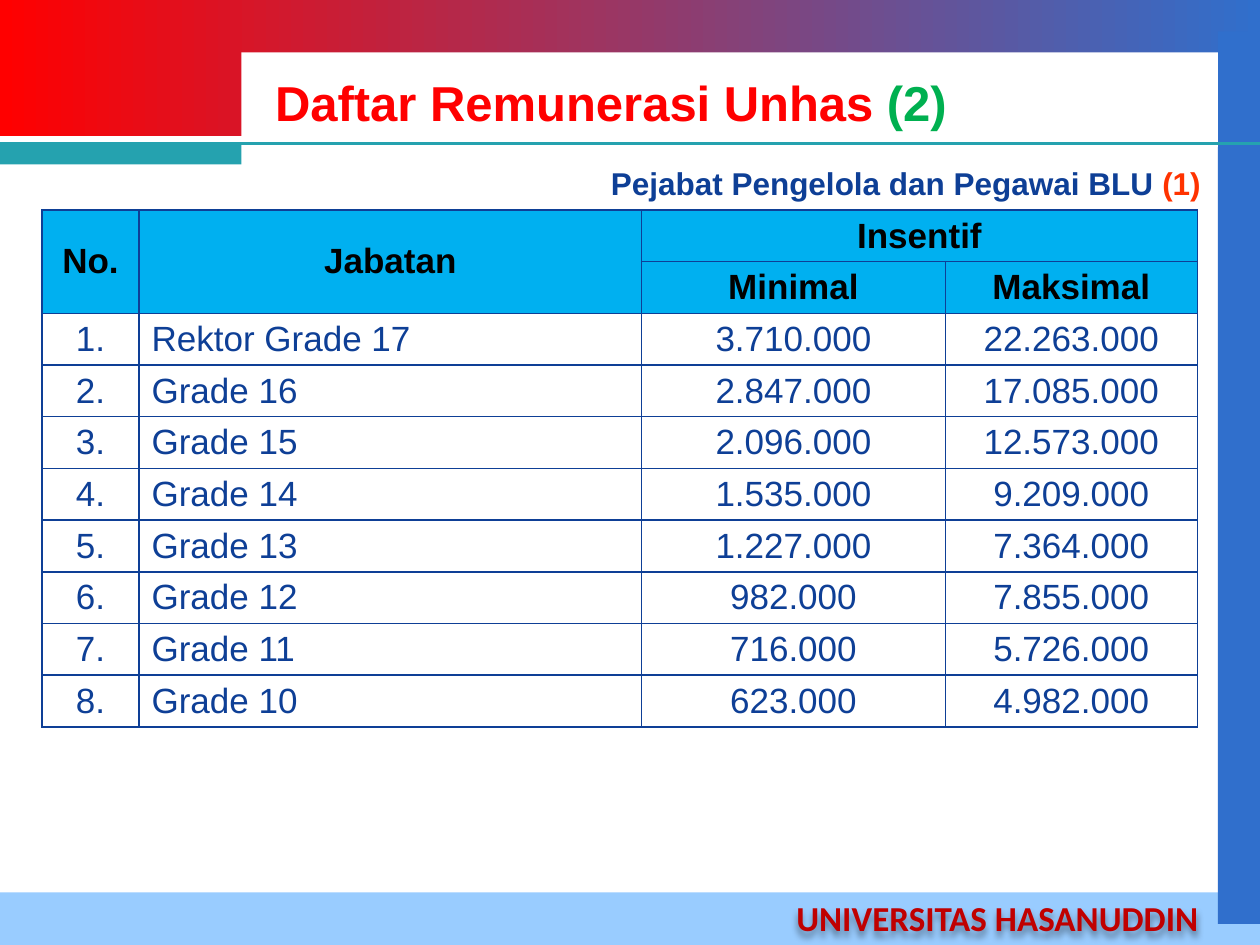
from dataclasses import dataclass
from lxml.etree import SubElement
from pptx import Presentation
from pptx.dml.color import RGBColor
from pptx.enum.shapes import MSO_CONNECTOR, MSO_SHAPE
from pptx.enum.text import MSO_ANCHOR, MSO_AUTO_SIZE, PP_ALIGN
from pptx.oxml.ns import qn
from pptx.util import Pt


@dataclass(frozen=True)
class Theme:
    """Colours, fonts and type sizes of the slide."""
    red: str = "FF0000"
    blue: str = "306FCC"
    pale: str = "99CCFF"
    teal: str = "25A2AF"
    white: str = "FFFFFF"
    black: str = "000000"
    navy: str = "0E3F96"
    sky: str = "00B0F0"
    green: str = "00B050"
    orange: str = "FF3300"
    maroon: str = "C00000"
    sans: str = "Arial"
    brand: str = "Calibri"
    title: int = 28
    cell: int = 20
    label: int = 18


THEME = Theme()
WIDTHS = (55.4, 287.3, 173.5, 144)
HEIGHT = 29.5
HEAD = (("No.", "Jabatan", "Insentif", ""), ("", "", "Minimal", "Maksimal"))
RANKS = (
    ("Rektor Grade 17", "3.710.000", "22.263.000"),
    ("Grade 16", "2.847.000", "17.085.000"),
    ("Grade 15", "2.096.000", "12.573.000"),
    ("Grade 14", "1.535.000", "9.209.000"),
    ("Grade 13", "1.227.000", "7.364.000"),
    ("Grade 12", "982.000", "7.855.000"),
    ("Grade 11", "716.000", "5.726.000"),
    ("Grade 10", "623.000", "4.982.000"),
)


def rgb(code):
    """Turn a hex code into a colour."""
    return RGBColor.from_string(code)


def add_bar(slide, box, *tints):
    """Draw a plain bar, or a left-to-right gradient for two tints."""
    bar = slide.shapes.add_shape(MSO_SHAPE.RECTANGLE, *map(Pt, box))
    bar.shadow.inherit = False
    bar.line.fill.background()
    if len(tints) == 1:
        bar.fill.solid()
        bar.fill.fore_color.rgb = rgb(tints[0])
        return
    bar.fill.gradient()
    bar.fill.gradient_angle = 0
    for stop, tint, place in zip(bar.fill.gradient_stops, tints, (0, 1)):
        stop.color.rgb = rgb(tint)
        stop.position = place


def add_rule(slide, top, tint):
    """Draw a rule across the slide."""
    rule = slide.shapes.add_connector(
        MSO_CONNECTOR.STRAIGHT, 0, Pt(top), Pt(720), Pt(top))
    rule.line.color.rgb = rgb(tint)
    rule.line.width = Pt(2.25)
    SubElement(rule._element.spPr, qn("a:effectLst"))


def write(frame, parts, size, face=THEME.sans, bold=True, align=PP_ALIGN.LEFT):
    """Write one paragraph from pairs of text and colour."""
    para = frame.paragraphs[0]
    para.alignment = align
    para.font.size = Pt(size)
    para.font.name = face
    para.font.bold = bold
    for text, tint in parts:
        run = para.add_run()
        run.text = text
        run.font.color.rgb = rgb(tint)


def add_label(slide, box, parts, size, face=THEME.sans):
    """Add a one-line text box."""
    label = slide.shapes.add_textbox(*map(Pt, box))
    label.text_frame.word_wrap = False
    label.text_frame.auto_size = MSO_AUTO_SIZE.SHAPE_TO_FIT_TEXT
    write(label.text_frame, parts, size, face)
    return label


def add_glow(shape):
    """Cast a soft shadow below the text."""
    group = SubElement(shape._element.spPr, qn("a:effectLst"))
    cast = SubElement(group, qn("a:outerShdw"), blurRad=str(Pt(4)),
                      dist=str(Pt(3)), dir="5400000", algn="t", rotWithShape="0")
    tint = SubElement(cast, qn("a:srgbClr"), val=THEME.black)
    SubElement(tint, qn("a:alpha"), val="40000")


def set_title(slide, box, parts):
    """Place the title above the bars and write it."""
    title = slide.shapes.title
    slide.shapes._spTree.append(title._element)
    title.left, title.top, title.width, title.height = map(Pt, box)
    title.text_frame.vertical_anchor = MSO_ANCHOR.MIDDLE
    write(title.text_frame, parts, THEME.title)


def set_edge(cell):
    """Line all four sides of a cell."""
    props = cell._tc.get_or_add_tcPr()
    for place, side in enumerate(("lnL", "lnR", "lnT", "lnB")):
        edge = SubElement(props, qn(f"a:{side}"), w=str(Pt(1)))
        fill = SubElement(edge, qn("a:solidFill"))
        SubElement(fill, qn("a:srgbClr"), val=THEME.navy)
        props.insert(place, edge)


def add_grid(slide, left, top):
    """Build the table of pay by grade."""
    ranks = tuple((f"{n}.", *rank) for n, rank in enumerate(RANKS, 1))
    rows = HEAD + ranks
    table = slide.shapes.add_table(
        len(rows), len(WIDTHS), Pt(left), Pt(top),
        Pt(sum(WIDTHS)), Pt(HEIGHT * len(rows))).table
    for column, width in zip(table.columns, WIDTHS):
        column.width = Pt(width)
    for y, row in enumerate(rows):
        table.rows[y].height = Pt(HEIGHT)
        head = y < len(HEAD)
        for x, text in enumerate(row):
            cell = table.cell(y, x)
            cell.fill.solid()
            cell.fill.fore_color.rgb = rgb(THEME.sky if head else THEME.white)
            cell.vertical_anchor = MSO_ANCHOR.MIDDLE if head else MSO_ANCHOR.TOP
            set_edge(cell)
            align = PP_ALIGN.LEFT if x == 1 and not head else PP_ALIGN.CENTER
            parts = [(text, THEME.black if head else THEME.navy)] if text else []
            write(cell.text_frame, parts, THEME.cell, bold=head, align=align)
    for start, end in (((0, 0), (1, 0)), ((0, 1), (1, 1)), ((0, 2), (0, 3))):
        table.cell(*start).merge(table.cell(*end))


def main():
    """Build and save the slide."""
    deck = Presentation()
    deck.slide_width, deck.slide_height = Pt(720), Pt(540)
    slide = deck.slides.add_slide(deck.slide_layouts[5])
    add_bar(slide, (0, 0, 720, 77.75), THEME.red, THEME.blue)
    add_bar(slide, (0, 510, 720, 30), THEME.pale)
    add_bar(slide, (696, 18, 24, 510), THEME.blue)
    add_bar(slide, (138, 30, 558, 54), THEME.white)
    add_rule(slide, 82, THEME.teal)
    add_bar(slide, (0, 82, 138, 12), THEME.teal)
    footer = add_label(slide, (448, 509, 246, 31.5),
                       [("UNIVERSITAS HASANUDDIN", THEME.maroon)],
                       THEME.cell, THEME.brand)
    add_glow(footer)
    set_title(slide, (150, 37.5, 540, 42),
              [("Daftar Remunerasi Unhas ", THEME.red), ("(2)", THEME.green)])
    add_grid(slide, 24, 120)
    add_label(slide, (342, 90, 355, 29),
              [("Pejabat Pengelola dan Pegawai BLU ", THEME.navy),
               ("(1)", THEME.orange)], THEME.label)
    deck.save("out.pptx")


if __name__ == "__main__":
    main()
